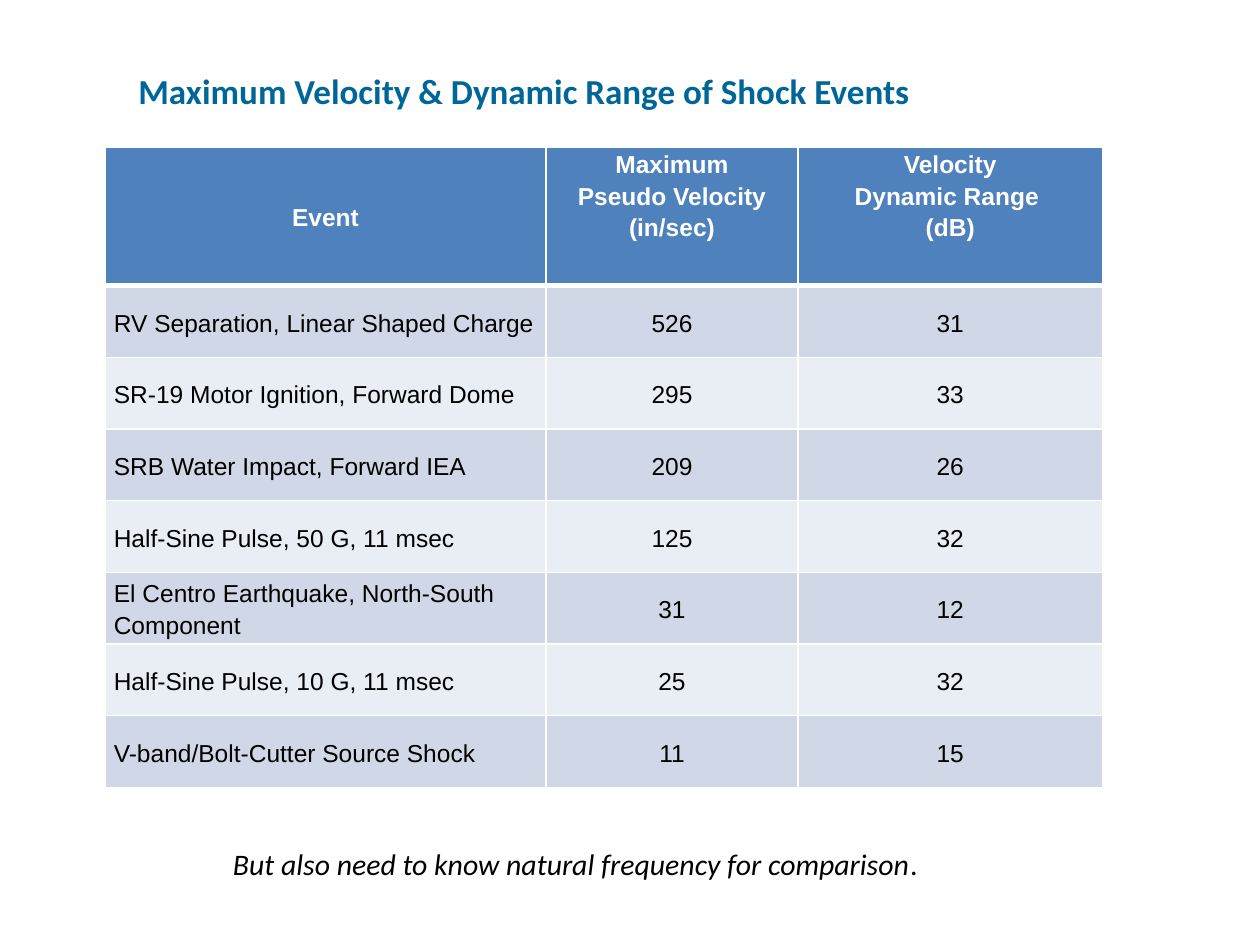
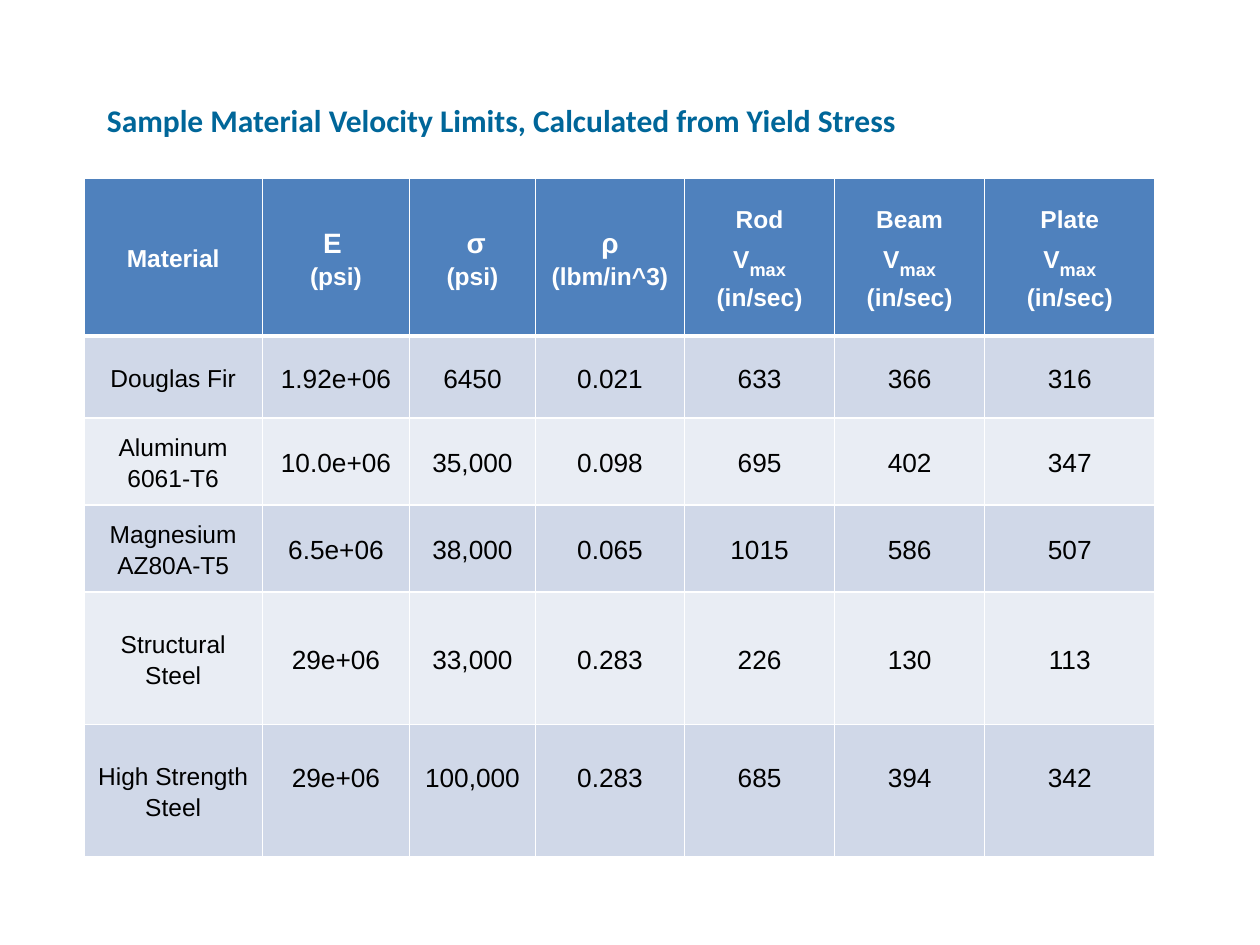
from dataclasses import dataclass

from lxml import etree
from pptx import Presentation, util as u
from pptx.dml.color import RGBColor
from pptx.enum import text
from pptx.oxml import ns


@dataclass(frozen=True)
class Theme:
    title: str = "006699"
    header: str = "4F81BD"
    bands: tuple = ("D0D8E8", "E9EDF4")
    white: str = "FFFFFF"
    black: str = "000000"
    heading_font: str = "Calibri"
    table_font: str = "Arial"
    label: int = 14
    figure: int = 15
    symbol: int = 16
    subscript: int = 18
    note: int = 17
    line_spacing: float = 1.15
    rule: int = 1
    header_rule: int = 3
    inset: float = 0.07


THEME = Theme()
GRID_COLUMNS, GRID_ROWS = 120, 90
SLIDE_WIDTH, SLIDE_HEIGHT = u.Inches(10), u.Inches(7.5)
CENTER, LEFT = text.PP_ALIGN.CENTER, text.PP_ALIGN.LEFT
MIDDLE, TOP = text.MSO_ANCHOR.MIDDLE, text.MSO_ANCHOR.TOP


def across(columns):
    return round(SLIDE_WIDTH * columns / GRID_COLUMNS)


def down(rows):
    return round(SLIDE_HEIGHT * rows / GRID_ROWS)


def apply(target, formats):
    for name, value in formats.items():
        setattr(target, name, value)


# Text: a line is a string or a list of (words, format) runs
def write(frame, lines, font, color, align=LEFT, spacing=None):
    for number, line in enumerate(lines):
        paragraph = frame.paragraphs[0] if number == 0 else frame.add_paragraph()
        apply(paragraph, {"alignment": align, "line_spacing": spacing})
        for words, changes in [(line, {})] if isinstance(line, str) else line:
            run = paragraph.add_run()
            run.text = words
            formats = {**font, **changes}
            baseline = formats.pop("baseline", None)
            formats["size"] = u.Pt(formats["size"])
            apply(run.font, formats)
            run.font.color.rgb = RGBColor.from_string(color)
            if baseline:
                run.font._element.set("baseline", str(baseline))


def add_text(slide, column, row, width, height, line, font, color):
    box = slide.shapes.add_textbox(across(column), down(row), across(width), down(height))
    apply(box.text_frame, {"word_wrap": True,
                           "auto_size": text.MSO_AUTO_SIZE.SHAPE_TO_FIT_TEXT})
    write(box.text_frame, [line], {"name": THEME.heading_font, **font}, color)


def add_title(slide, column, row, width, height, words, size):
    add_text(slide, column, row, width, height, words,
             {"size": size, "bold": True}, THEME.title)


# Tables
def rule_cell(cell, top, bottom):
    properties = cell._tc.get_or_add_tcPr()
    widths = {"lnL": THEME.rule, "lnR": THEME.rule, "lnT": top, "lnB": bottom}
    for position, (side, width) in enumerate(widths.items()):
        line = etree.Element(ns.qn("a:" + side), w=str(u.Pt(width)))
        fill = etree.SubElement(line, ns.qn("a:solidFill"))
        etree.SubElement(fill, ns.qn("a:srgbClr"), val=THEME.white)
        properties.insert(position, line)


def style_cell(cell, row, anchor):
    color = THEME.bands[(row - 1) % 2] if row else THEME.header
    cell.fill.solid()
    cell.fill.fore_color.rgb = RGBColor.from_string(color)
    apply(cell, {"margin_left": u.Inches(THEME.inset),
                 "margin_right": u.Inches(THEME.inset),
                 "margin_top": 0, "margin_bottom": 0, "vertical_anchor": anchor})
    rule_cell(cell, THEME.header_rule if row == 1 else THEME.rule,
              THEME.rule if row else THEME.header_rule)


def add_table(slide, column, row, widths, heights, records,
              name_align=CENTER, figure_size=THEME.label, header_anchor=MIDDLE):
    table = slide.shapes.add_table(
        len(heights), len(widths), across(column), down(row),
        across(sum(widths)), down(sum(heights))).table
    for table_column, width in zip(table.columns, widths):
        table_column.width = across(width)
    for table_row, height in zip(table.rows, heights):
        table_row.height = down(height)
    for i, record in enumerate(records):
        for j, lines in enumerate(record):
            cell = table.cell(i, j)
            style_cell(cell, i, header_anchor if i == 0 and j else MIDDLE)
            font = {"name": THEME.table_font, "bold": i == 0,
                    "size": figure_size if i and j else THEME.label}
            write(cell.text_frame, [lines] if isinstance(lines, str) else lines, font,
                  THEME.black if i else THEME.white,
                  name_align if i and j == 0 else CENTER, THEME.line_spacing)
    return table


# Header cells of the material table
def symbol_header(symbol, unit):
    return [[(symbol, {"size": THEME.symbol})], unit]


def limit_header(member):
    subscript = {"size": THEME.subscript, "baseline": -25000}
    return [member, [("V", {}), ("max", subscript)], "(in/sec)"]


SHOCK_EVENTS = [
    ("Event", ["Maximum", "Pseudo Velocity", "(in/sec)"],
     ["Velocity", "Dynamic Range ", "(dB)"]),
    ("RV Separation, Linear Shaped Charge", "526", "31"),
    ("SR-19 Motor Ignition, Forward Dome", "295", "33"),
    ("SRB Water Impact, Forward IEA", "209", "26"),
    ("Half-Sine Pulse, 50 G, 11 msec", "125", "32"),
    ("El Centro Earthquake, North-South Component", "31", "12"),
    ("Half-Sine Pulse, 10 G, 11 msec", "25", "32"),
    ("V-band/Bolt-Cutter Source Shock", "11", "15"),
]

MATERIALS = [
    ("Material", [[("E", {"size": THEME.symbol}), (" ", {})], "(psi)"],
     symbol_header(" σ", "(psi)"), symbol_header("ρ", "(lbm/in^3)"),
     *map(limit_header, ("Rod", "Beam", "Plate"))),
    ("Douglas Fir", "1.92e+06", "6450", "0.021", "633", "366", "316"),
    (["Aluminum", "6061-T6"], "10.0e+06", "35,000", "0.098", "695", "402", "347"),
    (["Magnesium", "AZ80A-T5"], "6.5e+06", "38,000", "0.065", "1015", "586", "507"),
    ("Structural Steel", "29e+06", "33,000", "0.283", "226", "130", "113"),
    (["High Strength", "Steel"], "29e+06", "100,000", "0.283", "685", "394", "342"),
]


def build_shock_events(slide):
    add_title(slide, 12, 6, 89, 5.25,
              "Maximum Velocity & Dynamic Range of Shock Events", 20)
    add_table(slide, 10, 14, [42, 24, 29], [13.2] + [6.83] * 7, SHOCK_EVENTS,
              name_align=LEFT, header_anchor=TOP)
    add_text(slide, 21, 80, 74, 4.7,
             [("But also need to know natural frequency for comparison", {}),
              (".", {"italic": False})],
             {"size": THEME.note, "italic": True}, THEME.black)


def build_materials(slide):
    add_title(slide, 9, 9, 94, 4.85,
              "Sample Material Velocity Limits, Calculated from Yield Stress", 18)
    table = add_table(slide, 8, 17, [17, 14, 12, 14.2, 14.3, 14.3, 16.2],
                      [15, 7.8, 8.3, 8.3, 12.6, 12.6], MATERIALS,
                      figure_size=THEME.figure)
    # The last row's figures sit level with the first line of its name
    for column in range(1, len(table.columns)):
        table.cell(len(table.rows) - 1, column).margin_bottom = down(2.7)


def main():
    presentation = Presentation()
    apply(presentation, {"slide_width": SLIDE_WIDTH, "slide_height": SLIDE_HEIGHT})
    for build in (build_shock_events, build_materials):
        build(presentation.slides.add_slide(presentation.slide_layouts[6]))
    presentation.save("out.pptx")


if __name__ == "__main__":
    main()
